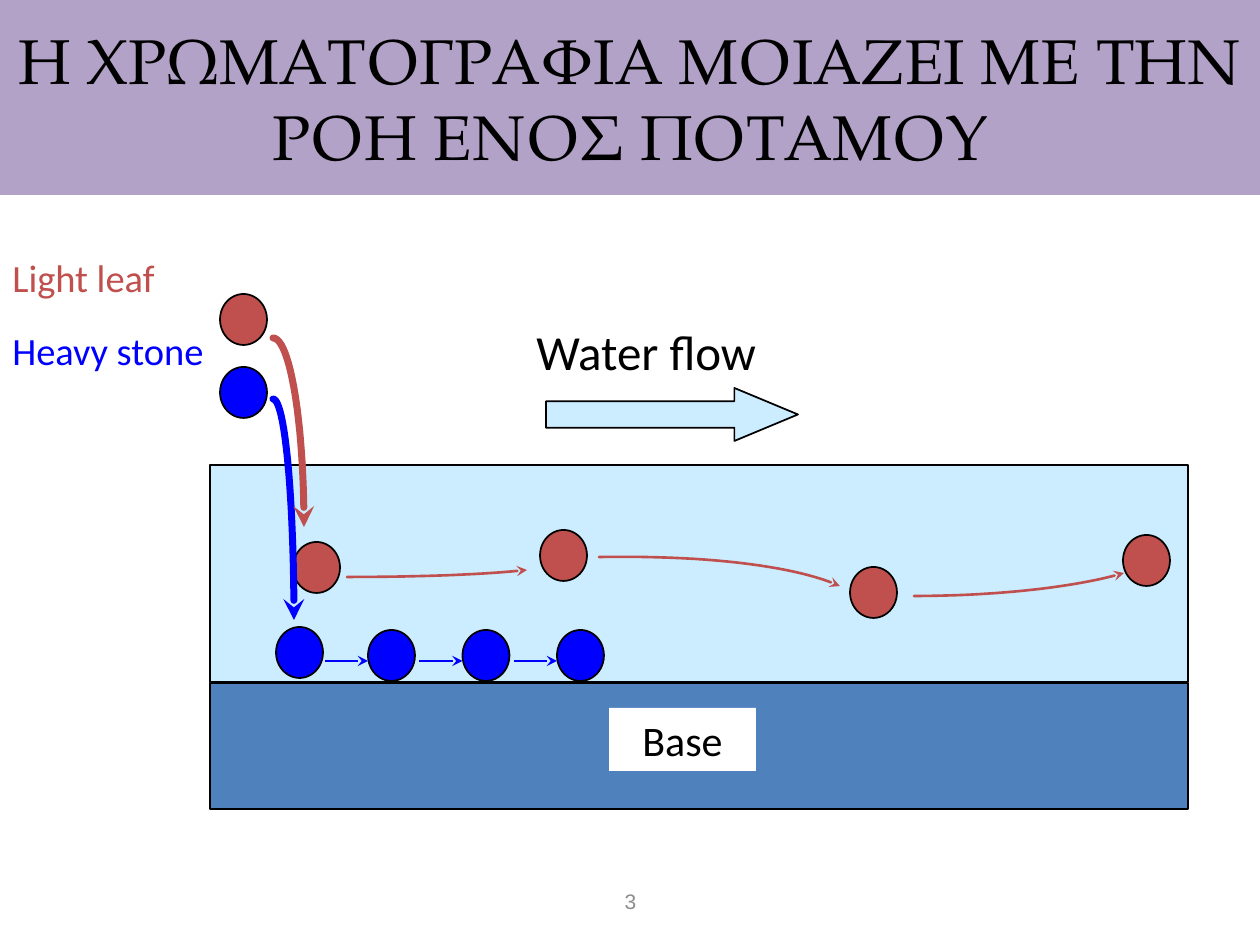
from lxml import etree
from pptx import Presentation
from pptx.dml.color import RGBColor
from pptx.enum.shapes import MSO_CONNECTOR, MSO_SHAPE
from pptx.enum.text import MSO_ANCHOR, PP_ALIGN
from pptx.oxml.ns import qn
from pptx.util import Pt

RECT, OVAL, ARROW = MSO_SHAPE.RECTANGLE, MSO_SHAPE.OVAL, MSO_SHAPE.RIGHT_ARROW
STRAIGHT = MSO_CONNECTOR.STRAIGHT
LEFT, MID = PP_ALIGN.LEFT, PP_ALIGN.CENTER
TOP, MIDDLE = MSO_ANCHOR.TOP, MSO_ANCHOR.MIDDLE

PX = 914400 / 126
WIDE, HIGH = 1260, 945
DOT = (47, 51)
STEPS = 24

COLORS = {
    "title": "B3A2C7", "base": "4F81BD", "water": "CCECFF", "leaf": "C0504D",
    "stone": "0000FF", "ink": "000000", "paper": "FFFFFF", "page": "8C8C8C",
}

# Content: box, fill
BANDS = [((210, 683, 978, 126), "base"), ((210, 465, 978, 217), "water")]
FLOW = (546, 388, 252, 53)

# Left top corner of each leaf and stone
GAP = 94.5
DOTS = {
    "leaf": [(220, 294), (293, 542), (540, 530), (850, 567), (1123, 535)],
    "stone": [(220, 367), (276, 627)] + [(368 + GAP * i, 630) for i in range(3)],
}
HOPS = [(325 + GAP * i, 661, 368 + GAP * i, 661) for i in range(3)]

# Curves: color, width, start, two control points, end
CURVES = [
    ("stone", 4, (273, 399), (285, 399), (294, 498), (294, 620)),
    ("leaf", 4, (273, 338), (290, 338), (304, 422), (304, 527)),
    ("leaf", 1.5, (347, 577), (415, 577), (480, 575), (527, 570)),
    ("leaf", 1.5, (599, 557), (718, 555), (800, 568), (840, 586)),
    ("leaf", 1.5, (914, 596), (998, 596), (1077, 587), (1124, 573)),
]

# Texts: words, box, fill, font, size, color, align, anchor, wrap
TEXTS = [
    ("H XΡΩΜΑΤΟΓΡΑΦΙΑ ΜΟΙΑΖΕΙ ΜΕ ΤΗΝ ΡΟΗ ΕΝΟΣ ΠΟΤΑΜΟΥ", (0, 0, WIDE, 195),
     "title", "TeX Gyre Pagella", 36, "ink", MID, MIDDLE, True),
    ("Base", (609, 708, 147, 63), "paper", "Calibri", 24, "ink", MID, TOP, True),
    ("Water flow", (524, 315, 275, 72), None, "Calibri", 28, "ink", LEFT, TOP, True),
    ("Light leaf", (0, 248, 181, 59), None, "Calibri", 22, "leaf", LEFT, TOP, False),
    ("Heavy stone", (0, 321, 239, 59), None, "Calibri", 22, "stone", LEFT, TOP, False),
    ("3", (431, 876, 399, 50), None, "Arial", 12, "page", MID, MIDDLE, True),
]


def emu(*nums):
    return [round(n * PX) for n in nums]


def tint(name):
    return RGBColor.from_string(COLORS[name])


def stroke(line, name, width):
    line.color.rgb = tint(name)
    line.width = Pt(width)


def add_tip(shape):
    line = shape.line._get_or_add_ln()
    etree.SubElement(line, qn("a:tailEnd"), type="stealth")


def add_block(slide, kind, box, fill):
    shape = slide.shapes.add_shape(kind, *emu(*box))
    shape.shadow.inherit = False
    shape.fill.solid()
    shape.fill.fore_color.rgb = tint(fill)
    stroke(shape.line, "ink", 1)
    return shape


def add_curve(slide, name, width, *knots):
    spots = []
    for i in range(STEPS + 1):
        t = i / STEPS
        parts = ((1 - t) ** 3, 3 * t * (1 - t) ** 2, 3 * t * t * (1 - t), t ** 3)
        spots.append(emu(*(sum(p * k[axis] for p, k in zip(parts, knots))
                           for axis in (0, 1))))
    maker = slide.shapes.build_freeform(*spots[0])
    maker.add_line_segments(spots[1:], close=False)
    shape = maker.convert_to_shape()
    shape.shadow.inherit = False
    shape.fill.background()
    stroke(shape.line, name, width)
    shape.line._get_or_add_ln().set("cap", "rnd")
    add_tip(shape)


def add_hop(slide, ends):
    hop = slide.shapes.add_connector(STRAIGHT, *emu(*ends))
    stroke(hop.line, "stone", 1.5)
    add_tip(hop)
    etree.SubElement(hop._element.spPr, qn("a:effectLst"))


def add_text(slide, words, box, fill, face, size, color, align, anchor, wrap):
    shape = slide.shapes.add_textbox(*emu(*box))
    if fill:
        shape.fill.solid()
        shape.fill.fore_color.rgb = tint(fill)
    frame = shape.text_frame
    frame.word_wrap = wrap
    frame.vertical_anchor = anchor
    para = frame.paragraphs[0]
    para.alignment = align
    run = para.add_run()
    run.text = words
    for key, value in {"name": face, "size": Pt(size)}.items():
        setattr(run.font, key, value)
    run.font.color.rgb = tint(color)


def main():
    deck = Presentation()
    deck.slide_width, deck.slide_height = emu(WIDE, HIGH)
    slide = deck.slides.add_slide(deck.slide_layouts[6])

    # River and its bed
    for box, fill in BANDS:
        add_block(slide, RECT, box, fill)

    # Leaves and stones
    for name, spots in DOTS.items():
        for spot in spots:
            add_block(slide, OVAL, spot + DOT, name)

    # Paths
    for curve in CURVES:
        add_curve(slide, *curve)
    for ends in HOPS:
        add_hop(slide, ends)

    # Flow arrow
    flow = add_block(slide, ARROW, FLOW, "water")
    flow.adjustments[0] = 0.5
    flow.adjustments[1] = 1.2

    # Title and labels
    for text in TEXTS:
        add_text(slide, *text)

    deck.save("out.pptx")


if __name__ == "__main__":
    main()
